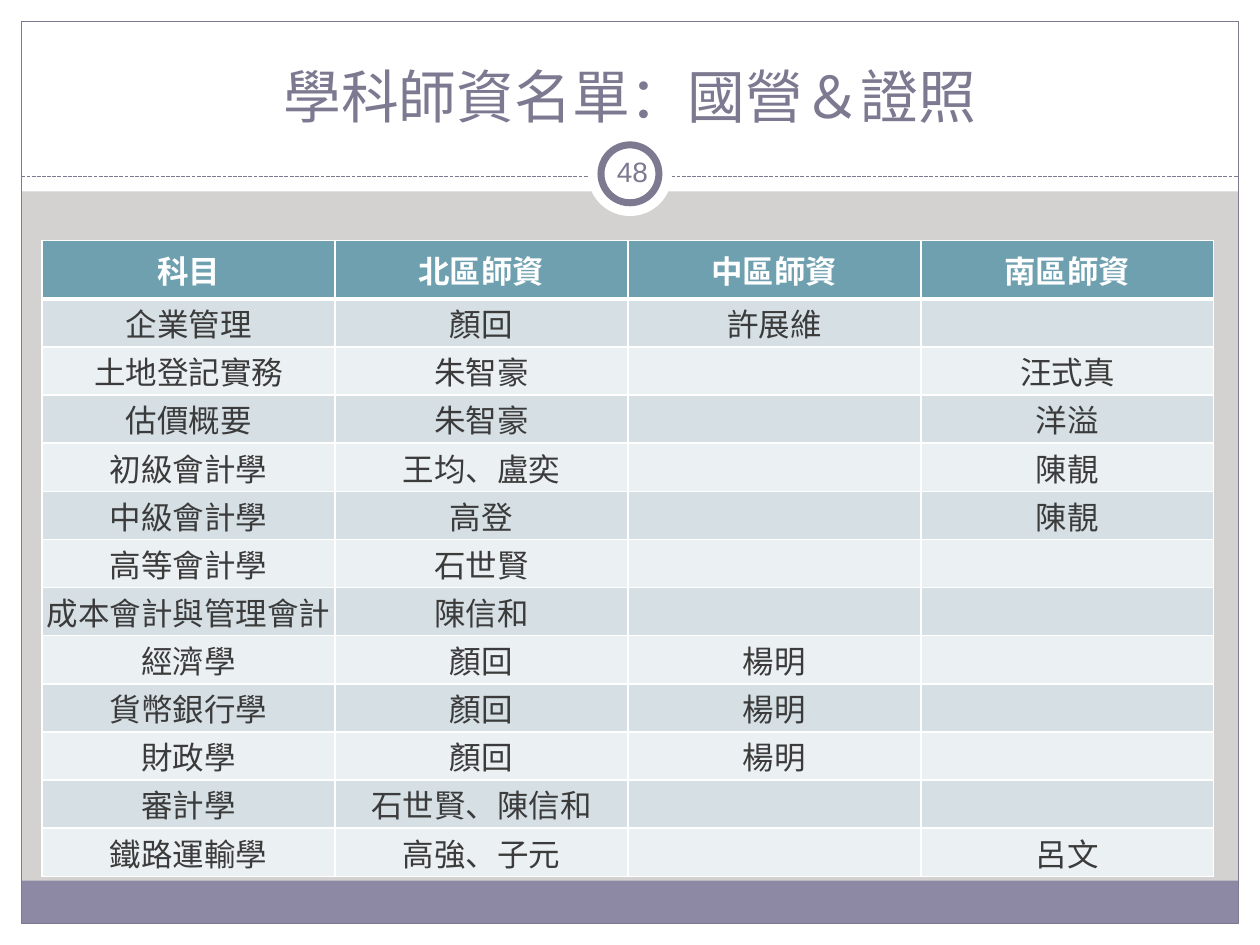
from lxml import etree
from pptx import Presentation
from pptx.dml.color import RGBColor
from pptx.enum.dml import MSO_LINE
from pptx.enum.shapes import MSO_CONNECTOR, MSO_SHAPE
from pptx.enum.text import MSO_ANCHOR, PP_ALIGN
from pptx.oxml.ns import qn
from pptx.util import Inches, Pt

RECTANGLE = MSO_SHAPE.RECTANGLE
OVAL = MSO_SHAPE.OVAL
STRAIGHT = MSO_CONNECTOR.STRAIGHT
DASHED = MSO_LINE.SQUARE_DOT
CENTER = PP_ALIGN.CENTER
MIDDLE = MSO_ANCHOR.MIDDLE
BOTTOM = MSO_ANCHOR.BOTTOM

WHITE = RGBColor(0xFF, 0xFF, 0xFF)
BACKGROUND = RGBColor(0xD4, 0xD2, 0xD0)
PURPLE = RGBColor(0x7C, 0x79, 0x91)
FOOTER_PURPLE = RGBColor(0x8D, 0x89, 0xA4)
HEADER_TEAL = RGBColor(0x6E, 0xA0, 0xB0)
BAND_COLORS = (RGBColor(0xD5, 0xDF, 0xE4), RGBColor(0xEB, 0xF0, 0xF2))
BODY_TEXT = RGBColor(0x3B, 0x3B, 0x3B)
FONT = "Arial"

WIDTH, HEIGHT = Inches(10), Inches(7.5)
MARGIN = Inches(0.17)
INNER_WIDTH = WIDTH - 2 * MARGIN
HEADER_HEIGHT = Inches(1.52)
RULE_TOP = Inches(1.4)
BADGE_MIDDLE = Inches(1.38)

ROWS = [
    ("科目", "北區師資", "中區師資", "南區師資"),
    ("企業管理", "顏回", "許展維", ""),
    ("土地登記實務", "朱智豪", "", "汪式真"),
    ("估價概要", "朱智豪", "", "洋溢"),
    ("初級會計學", "王均、盧奕", "", "陳靚"),
    ("中級會計學", "高登", "", "陳靚"),
    ("高等會計學", "石世賢", "", ""),
    ("成本會計與管理會計", "陳信和", "", ""),
    ("經濟學", "顏回", "楊明", ""),
    ("貨幣銀行學", "顏回", "楊明", ""),
    ("財政學", "顏回", "楊明", ""),
    ("審計學", "石世賢、陳信和", "", ""),
    ("鐵路運輸學", "高強、子元", "", "呂文"),
]

presentation = Presentation()
presentation.slide_width, presentation.slide_height = WIDTH, HEIGHT
slide = presentation.slides.add_slide(presentation.slide_layouts[5])
slide.background.fill.solid()
slide.background.fill.fore_color.rgb = BACKGROUND


def add_panel(kind, left, top, width, height, fill=None, line=None, weight=0.75):
    shape = slide.shapes.add_shape(kind, left, top, width, height)
    shape.shadow.inherit = False
    if fill is None:
        shape.fill.background()
    else:
        shape.fill.solid()
        shape.fill.fore_color.rgb = fill
    if line is None:
        shape.line.fill.background()
    else:
        shape.line.color.rgb = line
        shape.line.width = Pt(weight)


def write_text(frame, text, size, color, bold=False):
    paragraph = frame.paragraphs[0]
    paragraph.alignment = CENTER
    run = paragraph.add_run()
    run.text = text
    run.font.name = FONT
    run.font.size = Pt(size)
    run.font.bold = bold
    run.font.color.rgb = color


for left, top, width, height in (
    (0, HEIGHT - MARGIN, WIDTH, MARGIN),
    (0, 0, WIDTH, HEADER_HEIGHT),
    (0, 0, MARGIN, HEIGHT),
    (WIDTH - MARGIN, 0, MARGIN, HEIGHT),
):
    add_panel(RECTANGLE, left, top, width, height, WHITE)

add_panel(RECTANGLE, MARGIN, HEIGHT - 3 * MARGIN, INNER_WIDTH, 2 * MARGIN, FOOTER_PURPLE)
add_panel(RECTANGLE, MARGIN, MARGIN, INNER_WIDTH, HEIGHT - 2 * MARGIN, line=PURPLE)

rule = slide.shapes.add_connector(STRAIGHT, MARGIN, RULE_TOP, WIDTH - MARGIN, RULE_TOP)
rule.line.color.rgb = PURPLE
rule.line.width = Pt(0.75)
rule.line.dash_style = DASHED
etree.SubElement(rule.element.spPr, qn("a:effectLst"))

for diameter, outline in ((Inches(0.67), None), (Inches(0.46), PURPLE)):
    add_panel(OVAL, (WIDTH - diameter) // 2, BADGE_MIDDLE - diameter // 2,
              diameter, diameter, WHITE, outline, 4)

title = slide.shapes.title
title.element.getparent().append(title.element)
title.left, title.top = WIDTH // 30, HEIGHT // 30
title.width, title.height = WIDTH * 14 // 15, HEIGHT // 9
title.text_frame.vertical_anchor = BOTTOM
write_text(title.text_frame, "學科師資名單：國營＆證照", 33, PURPLE)

table_frame = slide.shapes.add_table(
    len(ROWS), len(ROWS[0]), WIDTH // 30, Inches(1.91), Inches(9.3), Inches(4.6))
table = table_frame.table
for row in table.rows:
    row.height = Inches(0.35)

for row_index, names in enumerate(ROWS):
    is_header = row_index == 0
    for column_index, name in enumerate(names):
        cell = table.cell(row_index, column_index)
        cell.vertical_anchor = MIDDLE
        if not is_header:
            cell.margin_left = cell.margin_right = Inches(0.02)
            cell.margin_top = cell.margin_bottom = Inches(0.01)
        properties = cell._tc.get_or_add_tcPr()
        heavy_side = {0: "lnB", 1: "lnT"}.get(row_index)
        for side in ("lnL", "lnR", "lnT", "lnB"):
            weight = Pt(3 if side == heavy_side else 1)
            border = etree.SubElement(properties, qn(f"a:{side}"), w=str(weight))
            border_fill = etree.SubElement(border, qn("a:solidFill"))
            etree.SubElement(border_fill, qn("a:srgbClr"), val=str(WHITE))
        cell.fill.solid()
        cell.fill.fore_color.rgb = HEADER_TEAL if is_header else BAND_COLORS[(row_index - 1) % 2]
        if name:
            write_text(cell.text_frame, name, 18, WHITE if is_header else BODY_TEXT, is_header)

page_number = slide.shapes.add_textbox(Inches(4.77), Inches(1.12), Inches(0.5), Inches(0.48))
frame = page_number.text_frame
frame.word_wrap = True
frame.vertical_anchor = MIDDLE
frame.margin_left = frame.margin_right = Inches(0.05)
frame.margin_top = frame.margin_bottom = Inches(0.05)
write_text(frame, "48", 16, PURPLE)

presentation.save("out.pptx")
